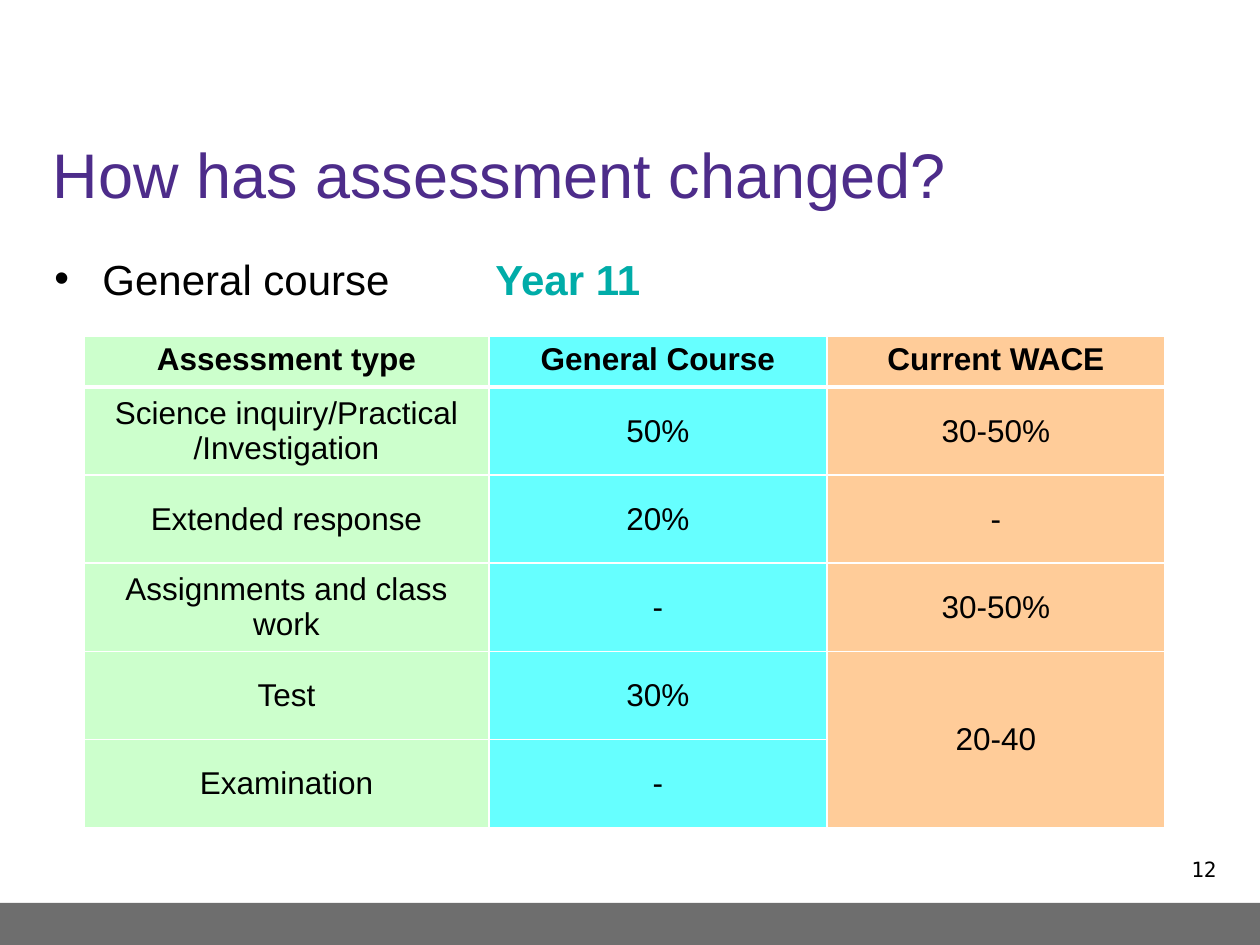
from lxml.etree import SubElement
from pptx import Presentation
from pptx.dml.color import RGBColor
from pptx.enum.shapes import MSO_SHAPE
from pptx.enum.text import MSO_ANCHOR, PP_ALIGN
from pptx.oxml.ns import qn
from pptx.util import Pt

PX = 914400 / 126
FILLS = ["CCFFCC", "66FFFF", "FFCC99"]
COLS = [405, 338, 338]
ROWS = [51] + [88] * 5
DATA = [
    ["Assessment type", "General Course", "Current WACE"],
    ["Science inquiry/Practical\n/Investigation", "50%", "30-50%"],
    ["Extended response", "20%", "-"],
    ["Assignments and class work", "-", "30-50%"],
    ["Test", "30%", "20-40"],
    ["Examination", "-", ""],
]


def px(n):
    return round(n * PX)


def place(box):
    return [px(n) for n in box]


def color(code):
    return RGBColor.from_string(code)


def style(font, size, code="000000", bold=False, name="Arial"):
    look = {"size": Pt(size), "bold": bold, "name": name}
    for key, value in look.items():
        setattr(font, key, value)
    font.color.rgb = color(code)


def add_title(slide, box):
    title = slide.shapes.title
    title.left, title.top, title.width, title.height = place(box)
    frame = title.text_frame
    frame.text = "How has assessment changed?"
    frame.vertical_anchor = MSO_ANCHOR.MIDDLE
    para = frame.paragraphs[0]
    para.alignment = PP_ALIGN.LEFT
    style(para.runs[0].font, 36, "4D2C8A")


def add_text(slide, box):
    frame = slide.shapes.add_textbox(*place(box)).text_frame
    frame.word_wrap = True
    return frame.paragraphs[0]


def add_course(slide, box):
    para = add_text(slide, box)
    para.space_after = Pt(6)
    props = para._p.get_or_add_pPr()
    props.set("marL", str(px(48)))
    props.set("indent", str(px(-48)))
    SubElement(props, qn("a:buFont"), typeface="Arial")
    SubElement(props, qn("a:buChar"), char="•")
    for text, code, bold in [("General course\t\t", "000000", False),
                             ("Year 11", "00ACA8", True)]:
        run = para.add_run()
        run.text = text
        style(run.font, 24, code, bold)


def add_number(slide, box):
    para = add_text(slide, box)
    para.alignment = PP_ALIGN.RIGHT
    run = para.add_run()
    run.text = "12"
    style(run.font, 12, name="DejaVu Sans Mono")


def add_bar(slide, box):
    bar = slide.shapes.add_shape(MSO_SHAPE.RECTANGLE, *place(box))
    bar.shadow.inherit = False
    bar.fill.solid()
    bar.fill.fore_color.rgb = color("6E6E6E")
    bar.line.fill.background()


def edge(cell, row):
    """Draw white borders, thicker between the header and the body."""
    props = cell._tc.get_or_add_tcPr()
    for side in "LRTB":
        thick = (row, side) in [(0, "B"), (1, "T")]
        line = SubElement(props, qn(f"a:ln{side}"), w=str(Pt(3 if thick else 1)))
        fill = SubElement(line, qn("a:solidFill"))
        SubElement(fill, qn("a:srgbClr"), val="FFFFFF")


def fill_cell(cell, text, row, code):
    edge(cell, row)
    cell.fill.solid()
    cell.fill.fore_color.rgb = color(code)
    cell.vertical_anchor = MSO_ANCHOR.MIDDLE if row else MSO_ANCHOR.TOP
    cell.text = text
    for para in cell.text_frame.paragraphs:
        para.alignment = PP_ALIGN.CENTER
        style(para.font, 18, bold=row == 0)
        for run in para.runs:
            style(run.font, 18, bold=row == 0)


def add_grid(slide, left, top):
    box = place((left, top, sum(COLS), sum(ROWS)))
    table = slide.shapes.add_table(len(ROWS), len(COLS), *box).table
    for col, width in zip(table.columns, COLS):
        col.width = px(width)
    for row, height in zip(table.rows, ROWS):
        row.height = px(height)
    for r, texts in enumerate(DATA):
        for c, text in enumerate(texts):
            fill_cell(table.cell(r, c), text, r, FILLS[c])
    table.cell(4, 2).merge(table.cell(5, 2))


def main():
    deck = Presentation()
    deck.slide_width, deck.slide_height = place((1260, 945))
    slide = deck.slides.add_slide(deck.slide_layouts[5])
    add_bar(slide, (0, 903, 1260, 42))
    add_title(slide, (40, 115, 1178, 116))
    add_course(slide, (42, 247, 1176, 78))
    add_number(slide, (935, 850, 294, 58))
    add_grid(slide, 84, 336)
    deck.save("out.pptx")


if __name__ == "__main__":
    main()
